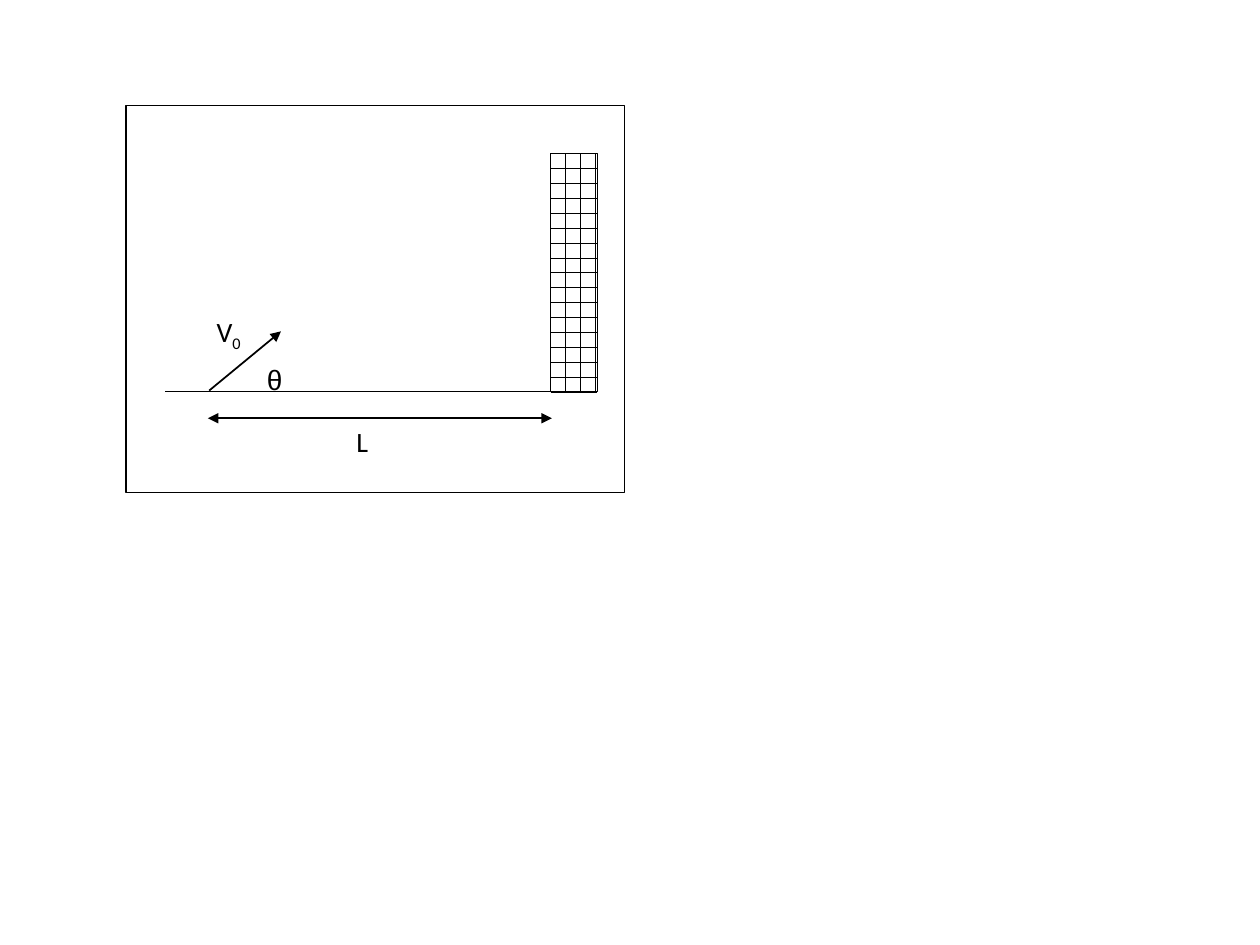
from lxml.etree import SubElement
from pptx import Presentation
from pptx.dml.color import RGBColor
from pptx.enum.dml import MSO_PATTERN
from pptx.enum.shapes import MSO_CONNECTOR, MSO_SHAPE
from pptx.oxml.ns import qn
from pptx.util import Inches, Pt

BLACK = RGBColor(0x00, 0x00, 0x00)
WHITE = RGBColor(0xFF, 0xFF, 0xFF)

# Content: boxes are left, top, width, height; lines are start, end
FRAME = (1, 0.84, 3.96, 3.07)
WALL = (4.37, 1.22, 0.37, 1.89)
GROUND_Y = WALL[1] + WALL[3]
GROUND = ((1.31, GROUND_Y), (WALL[0], GROUND_Y))
VELOCITY = ((1.66, 3.1), (2.23, 2.63))
DISTANCE = ((1.65, 3.32), (4.38, 3.32))
LABELS = [  # text, subscript, font, box
    ("L", "", "Calibri", (2.73, 3.28, 0.43, 0.38)),
    ("V", "0", "Calibri", (1.62, 2.4, 0.65, 0.49)),
    ("θ", "", "Arial", (2.02, 2.79, 0.43, 0.38)),
]


def add_box(shapes, box, weight, brick=False):
    rect = shapes.add_shape(MSO_SHAPE.RECTANGLE, *map(Inches, box))
    rect.shadow.inherit = False
    rect.line.color.rgb = BLACK
    rect.line.width = Pt(weight)
    if brick:
        rect.fill.patterned()
        rect.fill.pattern = MSO_PATTERN.HORIZONTAL_BRICK
        rect.fill.fore_color.rgb = BLACK
        rect.fill.back_color.rgb = WHITE
    else:
        rect.fill.background()


def add_line(shapes, ends, weight, arrows=()):
    start, end = ends
    line = shapes.add_connector(MSO_CONNECTOR.STRAIGHT, *map(Inches, start + end))
    line.line.color.rgb = BLACK
    line.line.width = Pt(weight)
    for arrow in arrows:
        SubElement(line.line._get_or_add_ln(), qn(f"a:{arrow}"), type="triangle")
    SubElement(line._element.spPr, qn("a:effectLst"))


def add_text(shapes, text, box, subscript="", font="Calibri", size=16, color=BLACK):
    frame = shapes.add_textbox(*map(Inches, box)).text_frame
    frame.word_wrap = True
    paragraph = frame.paragraphs[0]
    paragraph.line_spacing = 1.15
    paragraph.space_after = Pt(10)
    for part, baseline in ((text, 0), (subscript, -25000)):
        if not part:
            continue
        run = paragraph.add_run()
        run.text = part
        run.font.name = font
        run.font.size = Pt(size)
        run.font.color.rgb = color
        if baseline:
            run._r.get_or_add_rPr().set("baseline", str(baseline))


def main():
    prs = Presentation()
    prs.slide_width, prs.slide_height = Inches(10), Inches(7.5)
    slide = prs.slides.add_slide(prs.slide_layouts[6])
    diagram = slide.shapes.add_group_shape().shapes

    # Frame, ground and brick wall
    add_box(diagram, FRAME, 0.75)
    add_line(diagram, GROUND, 0.5)
    add_box(diagram, WALL, 0.5, brick=True)

    # Launch velocity and distance to the wall
    add_line(diagram, DISTANCE, 1, arrows=("headEnd", "tailEnd"))
    add_line(diagram, VELOCITY, 1, arrows=("tailEnd",))

    # Labels
    for text, subscript, font, box in LABELS:
        add_text(diagram, text, box, subscript=subscript, font=font)

    prs.save("out.pptx")


if __name__ == "__main__":
    main()
